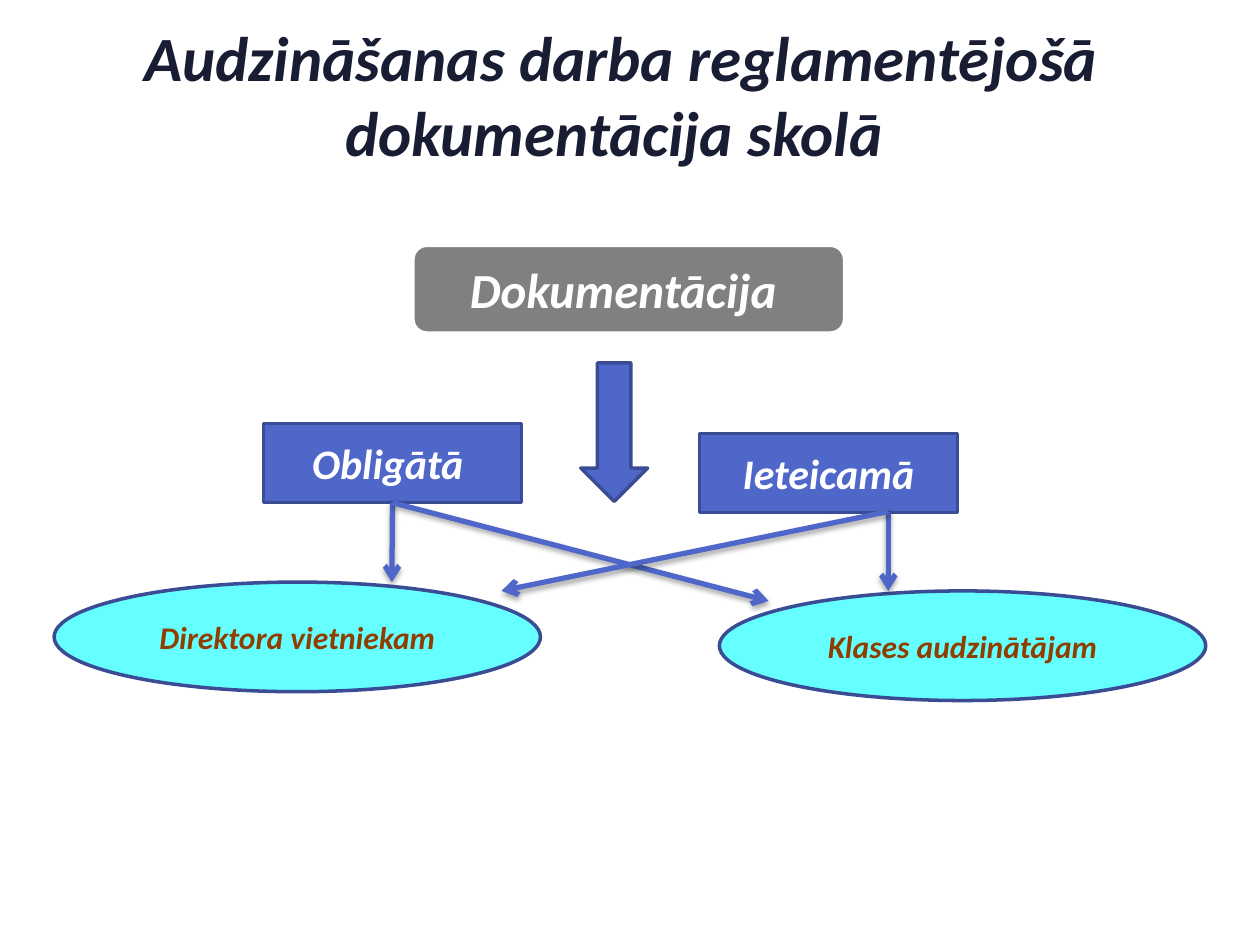
from lxml import etree
from pptx import Presentation
from pptx.dml.color import RGBColor
from pptx.enum.shapes import MSO_CONNECTOR, MSO_SHAPE
from pptx.enum.text import MSO_ANCHOR, PP_ALIGN
from pptx.oxml.ns import qn
from pptx.util import Inches, Pt

STRAIGHT = MSO_CONNECTOR.STRAIGHT
ROUND, RECT = MSO_SHAPE.ROUNDED_RECTANGLE, MSO_SHAPE.RECTANGLE
OVAL, DOWN = MSO_SHAPE.OVAL, MSO_SHAPE.DOWN_ARROW
MIDDLE, CENTER = MSO_ANCHOR.MIDDLE, PP_ALIGN.CENTER
BOTTOM = 2
COLORS = {
    "navy": "191D34", "gray": "808080", "white": "FFFFFF", "blue": "4E67C8",
    "edge": "3A4C94", "cyan": "66FFFF", "brown": "903E00", "black": "000000",
}


def rgb(name):
    return RGBColor.from_string(COLORS[name])


class Chart:
    """Draws styled elements on the current slide."""

    font = "Calibri"

    def __init__(self, slide):
        self.slide = slide

    def label(self, shape, text, size, color):
        frame = shape.text_frame
        frame.word_wrap = True
        frame.vertical_anchor = MIDDLE
        para = frame.paragraphs[0]
        para.text = text
        para.alignment = CENTER
        font = para.font
        font.name, font.size = self.font, Pt(size)
        font.bold = font.italic = True
        font.color.rgb = rgb(color)

    def title(self, box, text, size):
        shape = self.slide.shapes.add_textbox(*map(Inches, box))
        self.label(shape, text, size, "navy")

    def node(self, kind, box, fill, text="", size=18, color="white", edge="edge", width=2):
        shape = self.slide.shapes.add_shape(kind, *map(Inches, box))
        shape.shadow.inherit = False
        shape.fill.solid()
        shape.fill.fore_color.rgb = rgb(fill)
        shape.line.color.rgb = rgb(edge)
        shape.line.width = Pt(width)
        if text:
            self.label(shape, text, size, color)
        return shape

    def arrow(self, start, end, source=None):
        link = self.slide.shapes.add_connector(STRAIGHT, *map(Inches, start + end))
        if source is not None:
            link.begin_connect(source, BOTTOM)
        link.line.color.rgb = rgb("blue")
        link.line.width = Pt(3)
        props = link._element.spPr
        etree.SubElement(props.find(qn("a:ln")), qn("a:tailEnd"), type="arrow")
        effects = etree.SubElement(props, qn("a:effectLst"))
        shadow = etree.SubElement(
            effects, qn("a:outerShdw"), blurRad=str(int(Pt(3.1))),
            dist=str(int(Pt(1.8))), dir="5400000", rotWithShape="0")
        tint = etree.SubElement(shadow, qn("a:srgbClr"), val=COLORS["black"])
        etree.SubElement(tint, qn("a:alpha"), val="35000")


def main():
    deck = Presentation()
    deck.slide_width, deck.slide_height = Inches(10), Inches(7.5)
    chart = Chart(deck.slides.add_slide(deck.slide_layouts[6]))

    chart.title((0.43, 0.28, 9, 0.93),
                "Audzināšanas darba reglamentējošā dokumentācija skolā ", 36)
    chart.node(ROUND, (3.27, 1.94, 3.44, 0.71), "gray", "Dokumentācija ", 28,
               edge="white", width=3)
    must = chart.node(RECT, (2.09, 3.36, 2.05, 0.63), "blue", "Obligātā ", 24)
    chart.node(RECT, (5.55, 3.44, 2.05, 0.63), "blue", "Ieteicamā", 24)
    for left, top, text in ((0.43, 4.62, "Direktora vietniekam"),
                            (5.71, 4.69, "Klases audzinātājam")):
        chart.node(OVAL, (left, top, 3.86, 0.87), "cyan", text, 18, "brown")
    chart.node(DOWN, (4.61, 2.88, 0.53, 1.1), "blue")

    for start, ends, source in (((3.11, 3.99), ((3.11, 4.62), (6.1, 4.77)), must),
                                ((7.05, 4.06), ((7.05, 4.69), (3.98, 4.69)), None)):
        for end in ends:
            chart.arrow(start, end, source)

    deck.save("out.pptx")


if __name__ == "__main__":
    main()
